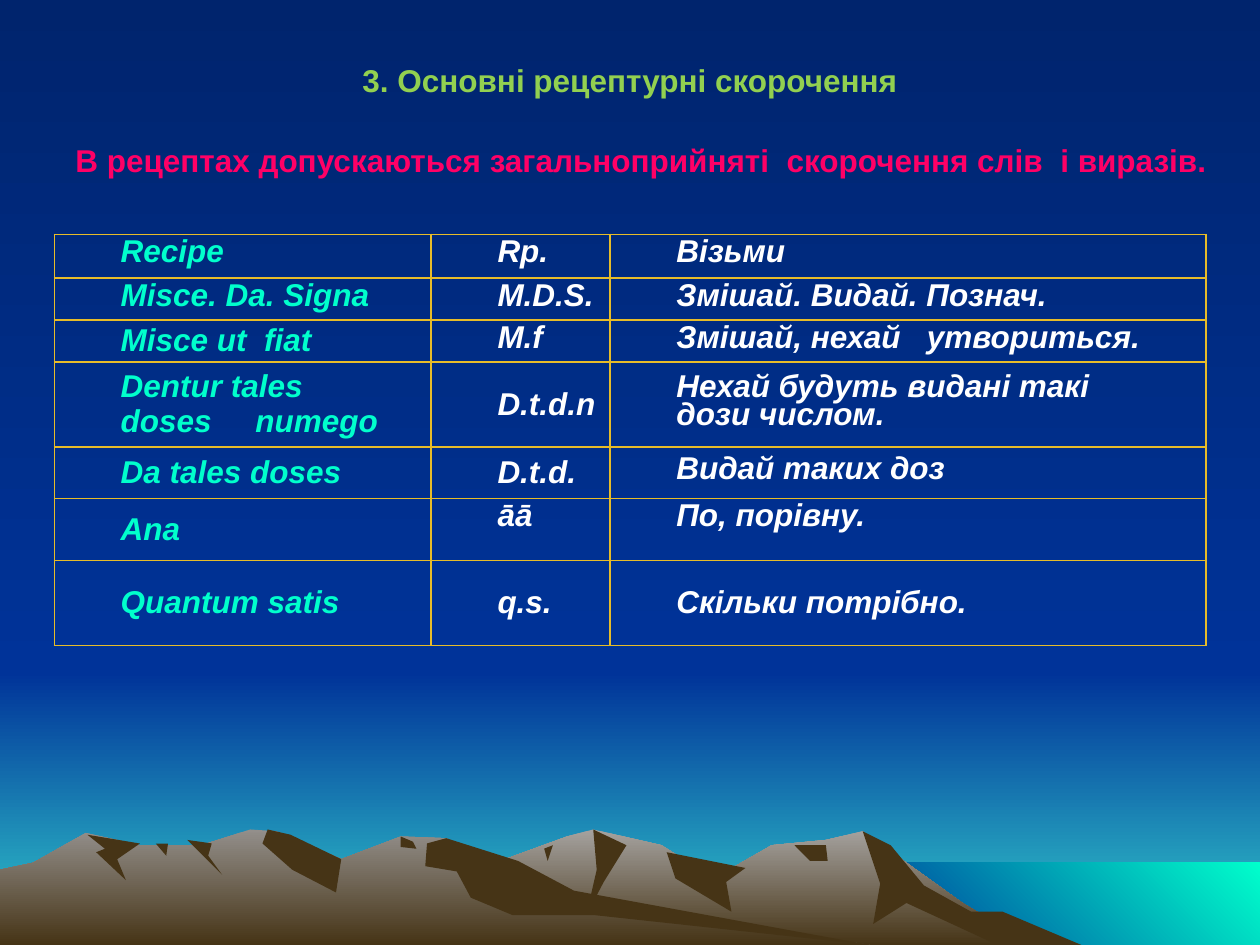
"""Build a slide listing the main prescription abbreviations above a mountain landscape."""
from lxml import etree
from pptx import Presentation
from pptx.dml.color import RGBColor
from pptx.enum import shapes, text
from pptx.oxml.ns import qn
from pptx.util import Pt

COLORS = {
    "night": "00246D", "blue": "003399", "horizon": "33CCCC", "aqua": "00FFCC",
    "stone": "A5A29F", "rock": "938F8B", "earth": "463416", "gold": "E7BC29",
    "white": "FFFFFF", "pink": "FF0066", "green": "92D050",
}
FONT = "Arial"
WIDTH, HEIGHT = 720, 540
HORIZON = 384
DOWN, UP_RIGHT = 270, 45
TITLE = "3. Основні рецептурні скорочення"
INTRO = "В рецептах допускаються загальноприйняті  скорочення слів  і виразів."

# Each row: height, three texts, three anchors (t = top, m = middle)
ROWS = [
    (25, ("Recipe", "Rp.", "Візьми"), "ttt"),
    (24, ("Мisce. Da. Signa", "M.D.S.", "Змішай. Видай. Познач."), "ttt"),
    (24, ("Misce ut  fiat", "M.f", "Змішай, нехай   утвориться."), "mtt"),
    (48.5, ("Dentur tales\ndoses     numego", "D.t.d.n",
            "Нехай будуть видані такі\nдози числом."), "mmm"),
    (29.5, ("Da tales doses", "D.t.d.", "Видай таких доз"), "mmm"),
    (35.5, ("Аnа", "āā", "По, порівну."), "mtt"),
    (48.5, ("Quantum satis", "q.s.", "Скільки потрібно."), "mmm"),
]
TIGHT_ROWS = (3, 4)
COLUMNS = [(215.3, "aqua"), (102.2, "white"), (340.6, "white")]
ANCHORS = {"t": text.MSO_ANCHOR.TOP, "m": text.MSO_ANCHOR.MIDDLE}

# Mountains from back to front: fill, outline
MOUNTAINS = [
    (("stone", "earth", DOWN), [
        (186, HEIGHT), (256, 503), (324, 478), (339, 474), (378, 483), (408, 502),
        (441, 483), (472, 480), (493, 475), (550, 516), (590, HEIGHT)]),
    (("earth",), [
        (493, 475), (509, 483), (528, 506), (555, 521), (573, 521), (618, HEIGHT),
        (570, HEIGHT), (518, 516), (499, 528), (503, 505)]),
    (("earth",), [(339, 474), (358, 483), (345, 504), (335, 523), (341, 497)]),
    (("earth",), [(381, 487), (426, 496), (415, 504), (418, 521), (386, 502)]),
    (("earth",), [(454, 483), (472, 483), (473, 492), (463, 492)]),
    (("earth",), [(311, 485), (316, 483), (313, 492)]),
    (("rock", "earth", DOWN), [
        (0, HEIGHT), (0, 497), (19, 493), (49, 476), (80, 483), (115, 483),
        (143, 474), (158, 475), (195, 491), (229, 478), (255, 479), (311, 513),
        (497, HEIGHT)]),
    (("earth",), [(153, 474), (166, 477), (195, 491), (192, 510), (167, 497), (150, 482)]),
    (("earth",), [
        (244, 482), (255, 479), (296, 492), (328, 509), (497, HEIGHT), (340, 523),
        (293, 523), (269, 513), (261, 498), (243, 495)]),
    (("earth",), [(229, 478), (236, 481), (238, 485), (229, 484)]),
    (("earth",), [(107, 480), (121, 482), (119, 489), (127, 500)]),
    (("earth",), [(89, 482), (96, 482), (95, 489)]),
    (("earth",), [(50, 477), (80, 482), (67, 491), (72, 503), (55, 487), (60, 485)]),
]


def color(name):
    return RGBColor.from_string(COLORS[name])


def paint(fill, names):
    if len(names) == 1:
        fill.solid()
        fill.fore_color.rgb = color(names[0])
        return
    *ends, angle = names
    fill.gradient()
    fill.gradient_angle = angle
    for position, (stop, name) in enumerate(zip(fill.gradient_stops, ends)):
        stop.color.rgb = color(name)
        stop.position = position


def finish(shape, names):
    paint(shape.fill, names)
    shape.line.fill.background()
    shape.shadow.inherit = False


def write(frame, content, *, fill, italic=False, align=text.PP_ALIGN.LEFT,
          indent=0, before=0, spacing=None):
    frame.text = content
    for paragraph in frame.paragraphs:
        paragraph.alignment = align
        paragraph.space_before = Pt(before)
        if spacing:
            paragraph.line_spacing = Pt(spacing)
        properties = paragraph._p.get_or_add_pPr()
        properties.set("marL", "0")
        properties.set("indent", str(Pt(indent)))
        font = paragraph.runs[0].font
        font.name, font.size, font.bold, font.italic = FONT, Pt(18), True, italic
        font.color.rgb = color(fill)


def add_landscape(slide):
    sea_left, sea_top = 492, 493
    bands = [
        (0, HORIZON, HEIGHT, ("blue", "horizon", DOWN)),
        (0, 0, HORIZON, ("night", "blue", DOWN)),
        (sea_left, sea_top, HEIGHT, ("blue", "aqua", UP_RIGHT)),
    ]
    for left, top, bottom, names in bands:
        band = slide.shapes.add_shape(shapes.MSO_SHAPE.RECTANGLE, Pt(left), Pt(top),
                                      Pt(WIDTH - left), Pt(bottom - top))
        finish(band, names)
    for names, (start, *rest) in MOUNTAINS:
        builder = slide.shapes.build_freeform(*start, scale=Pt(1))
        builder.add_line_segments(rest, close=True)
        finish(builder.convert_to_shape(), names)


def add_borders(cell):
    properties = cell._tc.get_or_add_tcPr()
    for side in ("lnL", "lnR", "lnT", "lnB"):
        line = etree.SubElement(properties, qn(f"a:{side}"), w=str(Pt(1)))
        solid = etree.SubElement(line, qn("a:solidFill"))
        etree.SubElement(solid, qn("a:srgbClr"), val=COLORS["gold"])


def add_abbreviations(slide):
    table = slide.shapes.add_table(
        len(ROWS), len(COLUMNS), Pt(31), Pt(133.9),
        Pt(sum(column[0] for column in COLUMNS)), Pt(sum(row[0] for row in ROWS))).table
    table.first_row = table.horz_banding = False
    for column, (width, _) in zip(table.columns, COLUMNS):
        column.width = Pt(width)
    for r, (height, contents, anchors) in enumerate(ROWS):
        table.rows[r].height = Pt(height)
        for c, content in enumerate(contents):
            cell = table.cell(r, c)
            last = c == len(contents) - 1
            cell.margin_left = cell.margin_right = Pt(2)
            cell.margin_top = cell.margin_bottom = Pt(0)
            cell.vertical_anchor = ANCHORS[anchors[c]]
            add_borders(cell)
            cell.fill.background()
            write(cell.text_frame, content, fill=COLUMNS[c][1], italic=True, indent=36,
                  align=text.PP_ALIGN.LEFT if last else text.PP_ALIGN.JUSTIFY,
                  spacing=16.1 if last and r in TIGHT_ROWS else None)


def add_title(slide):
    title = slide.shapes.title
    title.left, title.top, title.width, title.height = Pt(59.5), Pt(20.4), Pt(601), Pt(51)
    title.text_frame.word_wrap = False
    title.text_frame.vertical_anchor = text.MSO_ANCHOR.MIDDLE
    write(title.text_frame, TITLE, fill="green", align=text.PP_ALIGN.CENTER)
    slide.shapes._spTree.append(title._element)


def main():
    presentation = Presentation()
    presentation.slide_width, presentation.slide_height = Pt(WIDTH), Pt(HEIGHT)
    slide = presentation.slides.add_slide(presentation.slide_layouts[5])
    paint(slide.background.fill, ("night", "blue", DOWN))
    add_landscape(slide)
    intro = slide.shapes.add_textbox(Pt(36), Pt(77), Pt(670), Pt(357)).text_frame
    intro.word_wrap = True
    write(intro, INTRO, fill="pink", before=3.6)
    add_abbreviations(slide)
    add_title(slide)
    presentation.save("out.pptx")


if __name__ == "__main__":
    main()
